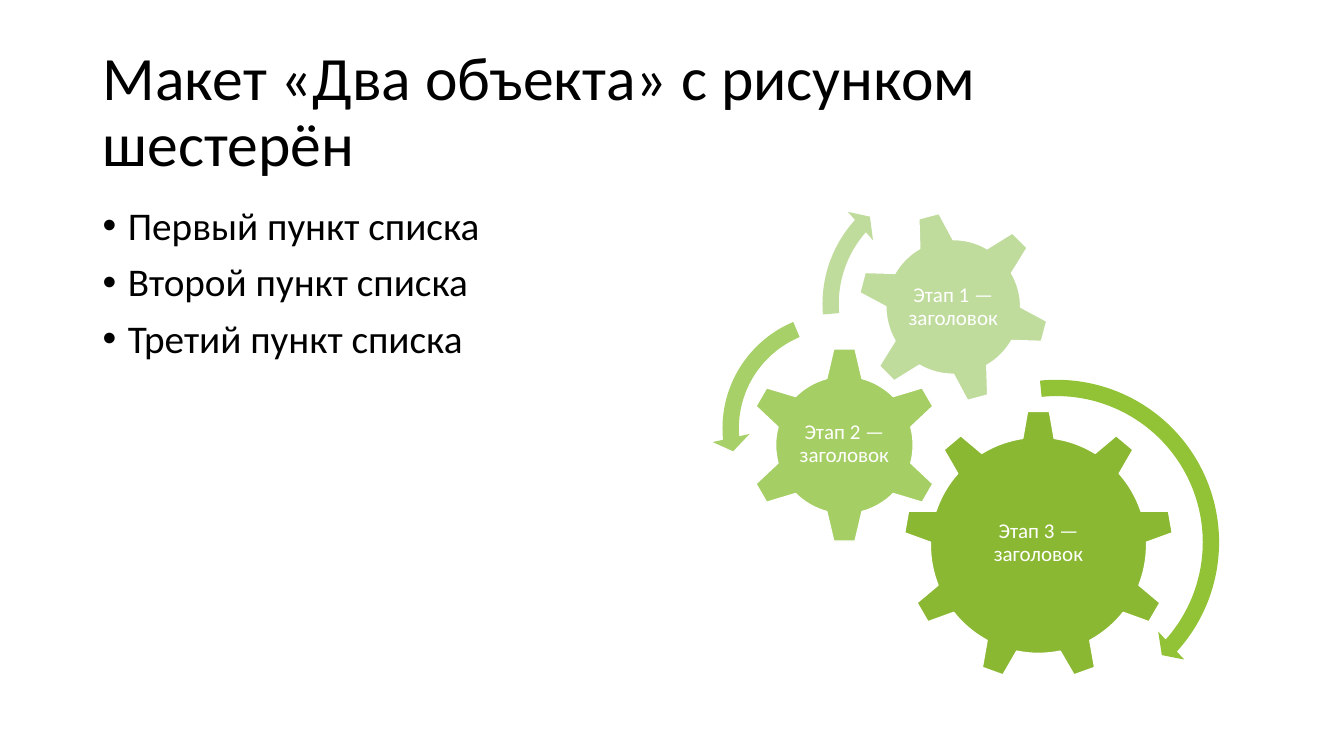
from lxml import etree
from pptx import Presentation
from pptx.dml.color import RGBColor
from pptx.enum.shapes import MSO_SHAPE
from pptx.enum.text import MSO_ANCHOR, PP_ALIGN
from pptx.oxml.ns import qn
from pptx.util import Inches, Pt

GEAR_6, GEAR_9 = MSO_SHAPE.GEAR_6, MSO_SHAPE.GEAR_9
ARROW, LEFT_ARROW = MSO_SHAPE.CIRCULAR_ARROW, MSO_SHAPE.LEFT_CIRCULAR_ARROW
TOP, MIDDLE = MSO_ANCHOR.TOP, MSO_ANCHOR.MIDDLE
LEFT, CENTER = PP_ALIGN.LEFT, PP_ALIGN.CENTER

FONT = "Calibri"
BLACK, WHITE = "000000", "FFFFFF"
LABEL_INSET = 0.02

TITLE = "Макет «Два объекта» с рисунком шестерён"
ITEMS = ["Первый пункт списка", "Второй пункт списка", "Третий пункт списка"]

GEARS = [
    (GEAR_9, 8.96, 4.07, 2.68, 0, "8BB833", "Этап 3 — заголовок", (9.5, 4.7, 1.6, 1.38)),
    (GEAR_6, 7.4, 3.44, 1.95, 0, "A5CE64", "Этап 2 — заголовок", (7.89, 3.93, 0.97, 0.96)),
    (GEAR_6, 8.5, 2.09, 1.91, 345, "C0DC9D", "Этап 1 — заголовок", (8.92, 2.51, 1.07, 1.07)),
]
ARROWS = [
    (ARROW, 8.76, 3.66, 3.44, "92C235", (0.047, 2.99, 25.22, 158.48, 0.055)),
    (LEFT_ARROW, 7.06, 3, 2.5, "A7D068", (0.065, 4.3, 104.89, 148.38, 0.075)),
    (ARROW, 8.05, 1.67, 2.69, "C0DC9C", (0.06, 3.94, 133.14, 105.08, 0.07)),
]


def color(value):
    """Return the colour for a hex string."""
    return RGBColor.from_string(value)


def set_attributes(target, values):
    """Set each attribute of the target from a dict."""
    for name, value in values.items():
        setattr(target, name, value)


def add_bullet(paragraph):
    """Give a paragraph a hanging round bullet."""
    properties = paragraph._p.get_or_add_pPr()
    properties.set("marL", str(Inches(0.25)))
    properties.set("indent", str(Inches(-0.25)))
    etree.SubElement(properties, qn("a:buFont"), typeface="Arial")
    etree.SubElement(properties, qn("a:buChar"), char="•")


def add_text(slide, box, lines, size, hex_color=BLACK, anchor=MIDDLE,
             alignment=LEFT, bullets=False, inset=None):
    """Add a text box with one paragraph per line."""
    frame = slide.shapes.add_textbox(*map(Inches, box)).text_frame
    set_attributes(frame, {"word_wrap": True, "vertical_anchor": anchor})
    if inset is not None:
        sides = ("left", "top", "right", "bottom")
        set_attributes(frame, {f"margin_{side}": Inches(inset) for side in sides})
    for index, line in enumerate(lines):
        paragraph = frame.add_paragraph() if index else frame.paragraphs[0]
        paragraph.text = line
        if bullets:
            add_bullet(paragraph)
        set_attributes(paragraph, {
            "alignment": alignment,
            "line_spacing": 0.9,
            "space_before": Pt(10 if index else 0),
        })
        set_attributes(paragraph.font, {"name": FONT, "size": Pt(size)})
        paragraph.font.color.rgb = color(hex_color)


def add_square_shape(slide, kind, left, top, size, fill):
    """Add a filled preset shape of equal width and height."""
    shape = slide.shapes.add_shape(kind, *map(Inches, (left, top, size, size)))
    shape.shadow.inherit = False
    shape.fill.solid()
    shape.fill.fore_color.rgb = color(fill)
    return shape


def add_gear(slide, kind, left, top, size, rotation, fill, label, label_box):
    """Add an outlined gear and its upright label."""
    gear = add_square_shape(slide, kind, left, top, size, fill)
    gear.rotation = rotation
    gear.line.color.rgb = color(WHITE)
    gear.line.width = Pt(1)
    add_text(slide, label_box, [label], 15, WHITE, alignment=CENTER, inset=LABEL_INSET)


def add_arrow(slide, kind, left, top, size, fill, adjustments):
    """Add a curved arrow without an outline."""
    arrow = add_square_shape(slide, kind, left, top, size, fill)
    arrow.line.fill.background()
    for index, value in enumerate(adjustments):
        arrow.adjustments[index] = value


def main():
    """Build and save the slide."""
    presentation = Presentation()
    set_attributes(presentation, {"slide_width": Inches(13.33), "slide_height": Inches(7.5)})
    slide = presentation.slides.add_slide(presentation.slide_layouts[6])
    add_text(slide, (0.92, 0.4, 11.5, 1.45), [TITLE], 44)
    add_text(slide, (0.92, 2, 5.67, 4.76), ITEMS, 28, anchor=TOP, bullets=True)
    for gear in GEARS:
        add_gear(slide, *gear)
    for arrow in ARROWS:
        add_arrow(slide, *arrow)
    presentation.save("out.pptx")


if __name__ == "__main__":
    main()
